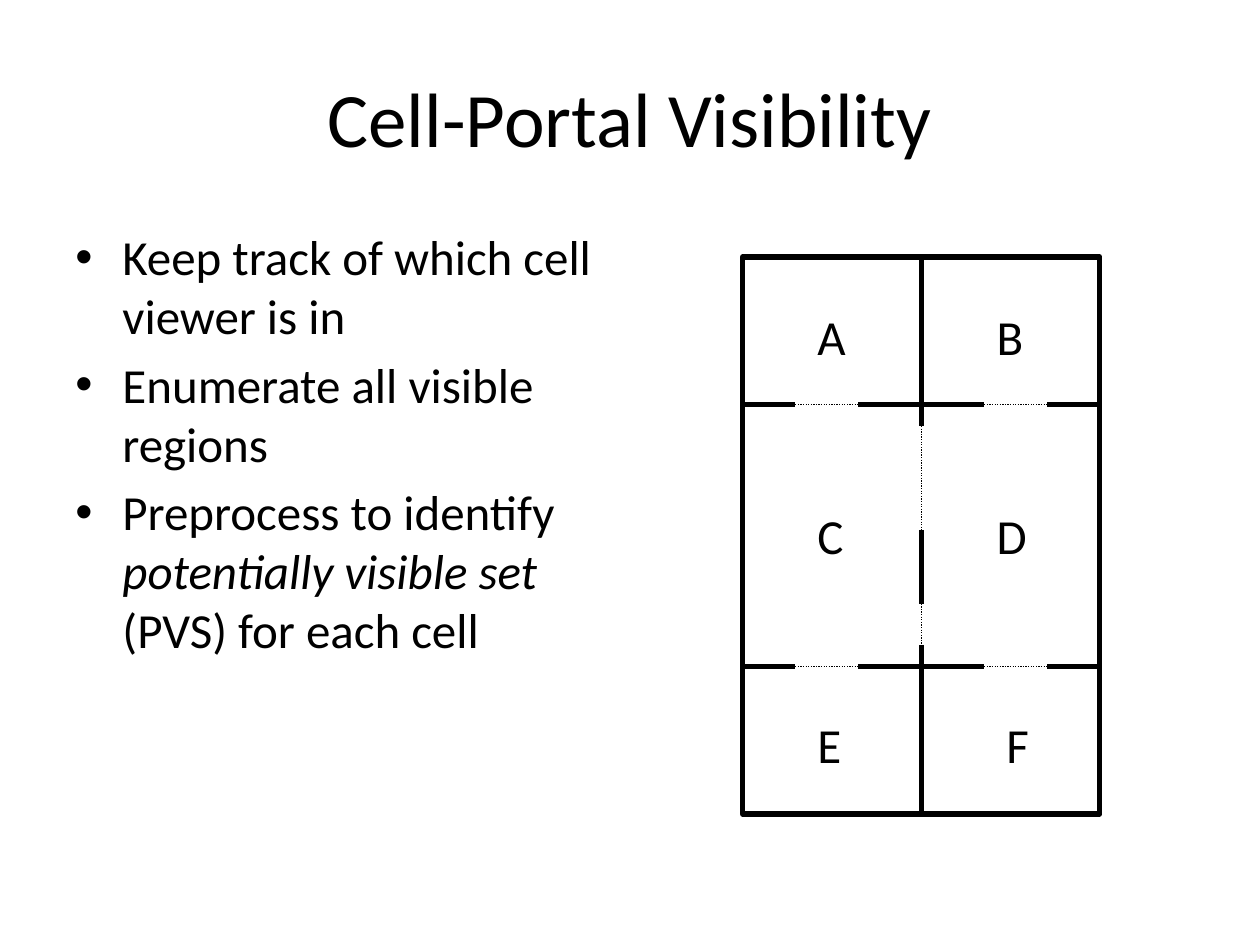
import pptx
import pptx.util
import pptx.dml.color
import pptx.enum.dml
import pptx.enum.shapes
import pptx.enum.text
from lxml import etree
from pptx.oxml.ns import qn

Cm, Pt = pptx.util.Cm, pptx.util.Pt
ALIGN = pptx.enum.text.PP_ALIGN
ANCHOR = pptx.enum.text.MSO_ANCHOR
COLORS = {name: pptx.dml.color.RGBColor.from_string(value)
          for name, value in {"ink": "000000"}.items()}

prs = pptx.Presentation()
prs.slide_width, prs.slide_height = Cm(25.4), Cm(19.05)
s = prs.slides.add_slide(prs.slide_layouts[6])


def add_run(p, text, size, italic=False):
    r = p.add_run()
    r.text = text
    r.font.name = "Calibri"
    r.font.size = Pt(size)
    r.font.italic = italic
    r.font.color.rgb = COLORS["ink"]


def add_line(x1, y1, x2, y2, portal=False):
    sp = s.shapes.add_connector(pptx.enum.shapes.MSO_CONNECTOR.STRAIGHT,
                                Cm(x1), Cm(y1), Cm(x2), Cm(y2))
    sp.line.color.rgb = COLORS["ink"]
    sp.line.width = Pt(0.75 if portal else 3)
    if portal:
        sp.line.dash_style = pptx.enum.dml.MSO_LINE.ROUND_DOT
    etree.SubElement(sp._element.spPr, qn("a:effectLst"))


# Title
tf = s.shapes.add_textbox(Cm(1.27), Cm(0.76), Cm(22.86), Cm(3.18)).text_frame
tf.word_wrap = True
tf.vertical_anchor = ANCHOR.MIDDLE
p = tf.paragraphs[0]
p.alignment = ALIGN.CENTER
add_run(p, "Cell-Portal Visibility", 44)

# Bulleted points: each a list of (text, italic) runs
points = [
    [("Keep track of which cell viewer is in", False)],
    [("Enumerate all visible regions", False)],
    [("Preprocess to identify ", False), ("potentially visible set ", True),
     ("(PVS) for each cell", False)],
]
tf = s.shapes.add_textbox(Cm(1.27), Cm(4.45), Cm(11.22), Cm(12.57)).text_frame
tf.word_wrap = True
for i, point in enumerate(points):
    p = tf.add_paragraph() if i else tf.paragraphs[0]
    p.space_before = Pt(5.6)
    pPr = p._p.get_or_add_pPr()
    pPr.set("marL", str(Cm(0.95)))
    pPr.set("indent", str(-Cm(0.95)))
    etree.SubElement(pPr, qn("a:buFont"), typeface="Arial")
    etree.SubElement(pPr, qn("a:buChar"), char="•")
    for text, italic in point:
        add_run(p, text, 28, italic)

# Floor plan: outer wall
left, middle, right = 14.97, 18.57, 22.17
top, upper, lower, bottom = 5.18, 8.15, 13.44, 16.41
sp = s.shapes.add_shape(pptx.enum.shapes.MSO_SHAPE.RECTANGLE, Cm(left), Cm(top),
                        Cm(right - left), Cm(bottom - top))
sp.shadow.inherit = False
sp.fill.background()
sp.line.color.rgb = COLORS["ink"]
sp.line.width = Pt(3)

# Inner walls, with a portal in every second stretch
door = 1.27
across = [left, middle - 2 * door, middle - door,
          middle + door, middle + 2 * door, right]
down = [top, 8.59, 10.69, 12.17, 13, bottom]
for i in range(5):
    portal = i % 2 == 1
    for y in (upper, lower):
        add_line(across[i], y, across[i + 1], y, portal)
    add_line(middle, down[i], middle, down[i + 1], portal)

# Cell names
cells = [("A", 16.23, 6.05), ("B", 19.84, 6.05),
         ("C", 16.23, 10.06), ("D", 19.84, 10.06),
         ("E", 16.23, 14.27), ("F", 20.04, 14.27)]
for name, x, y in cells:
    tf = s.shapes.add_textbox(Cm(x), Cm(y), Cm(1.08), Cm(1.45)).text_frame
    tf.word_wrap = True
    add_run(tf.paragraphs[0], name, 28)

prs.save("out.pptx")
